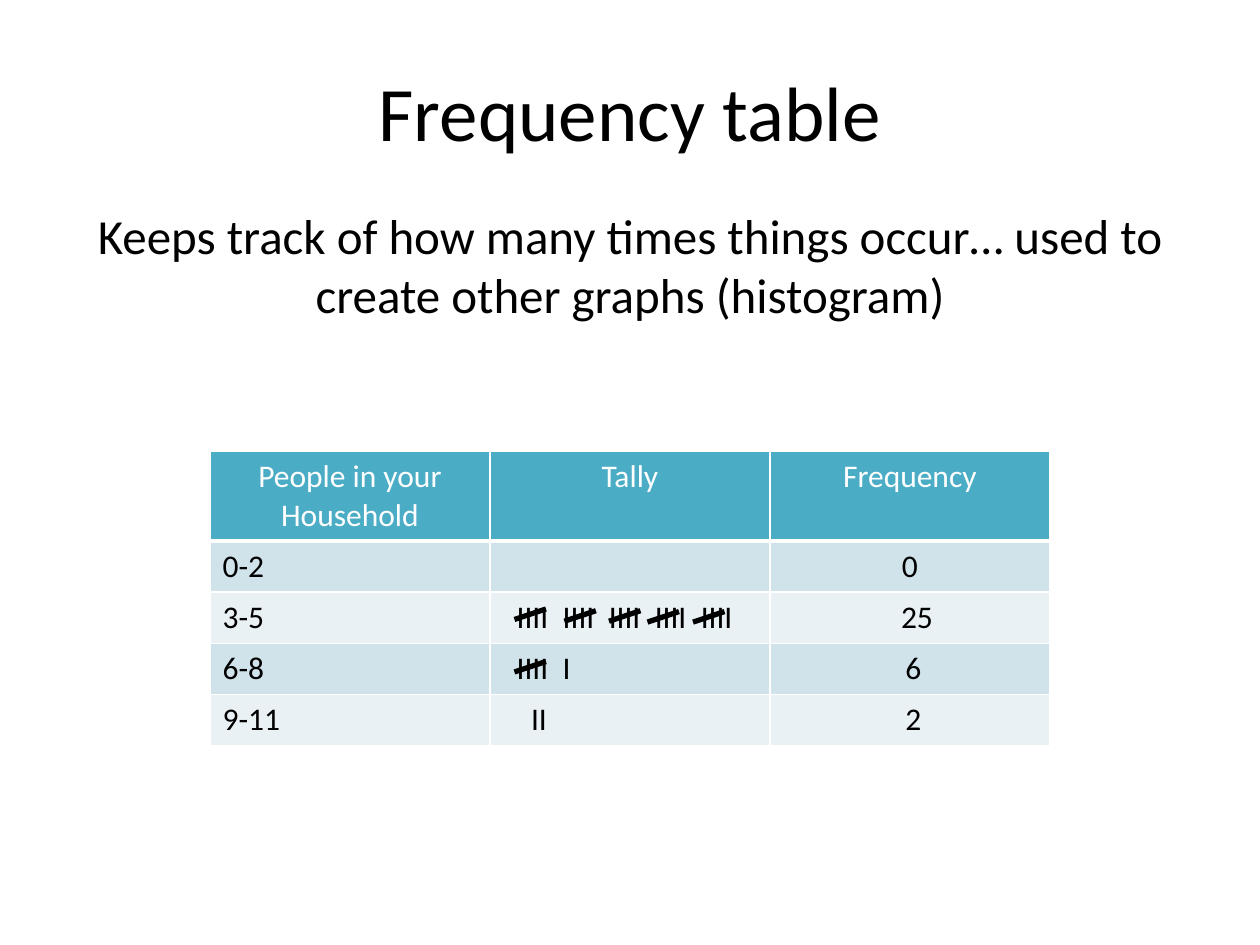
from lxml.etree import SubElement
from pptx import Presentation
from pptx.dml.color import RGBColor
from pptx.enum.shapes import MSO_CONNECTOR as Connector
from pptx.enum.text import MSO_ANCHOR as Anchor, PP_ALIGN as Align
from pptx.oxml.ns import qn
from pptx.util import Pt

FONT = "Calibri"
BLACK, WHITE, TEAL = "000000", "FFFFFF", "4BACC6"
BANDS = ("D0E3EA", "E9F1F5")
CELL_MARGIN = 7.2
TALLY_PITCH = 26.3
HEADINGS = ("People in your Household", "Tally", "Frequency")
ROWS = (
    ("0-2", "", 0, "0", 0),
    ("3-5", "IIII\tIIII\tIIII\tIIII\tIIII", 8.1, "25", 8.1),
    ("6-8", "IIII\tI", 8.1, "6", 4),
    ("9-11", "II", 16.3, "2", 4),
)
STRIKES = ((174, 126), (174, 96), (202.5, 97), (228, 97), (250, 97.5), (276, 97.5))


def color(code):
    """Turn a hex string into a colour."""
    return RGBColor.from_string(code)


def write(paragraph, words, size, code, align):
    """Add one formatted run to a paragraph."""
    paragraph.alignment = align
    run = paragraph.add_run()
    run.text = words
    run.font.name = FONT
    run.font.size = Pt(size)
    run.font.color.rgb = color(code)


def place(part, box):
    """Move a shape to a box given in points."""
    part.left, part.top, part.width, part.height = map(Pt, box)


def add_title(slide, box):
    """Fill the title placeholder."""
    title = slide.shapes.title
    place(title, box)
    title.text_frame.vertical_anchor = Anchor.MIDDLE
    write(title.text_frame.paragraphs[0], "Frequency table", 44, BLACK, Align.CENTER)


def add_description(slide, box):
    """Fill the body placeholder with an unbulleted, centred sentence."""
    body = slide.placeholders[1]
    place(body, box)
    sentence = body.text_frame.paragraphs[0]
    props = sentence._p.get_or_add_pPr()
    props.set("marL", "0")
    props.set("indent", "0")
    SubElement(props, qn("a:buNone"))
    sentence.space_before = Pt(0)
    write(
        sentence,
        "Keeps track of how many times things occur… used to create other graphs (histogram)",
        28, BLACK, Align.CENTER,
    )


def set_borders(cell, bottom):
    """Draw white lines around a cell."""
    props = cell._tc.get_or_add_tcPr()
    for index, (side, width) in enumerate((("L", 1), ("R", 1), ("T", 1), ("B", bottom))):
        line = props.makeelement(qn(f"a:ln{side}"), {"w": str(Pt(width))})
        fill = SubElement(line, qn("a:solidFill"))
        SubElement(fill, qn("a:srgbClr"), val=WHITE)
        props.insert(index, line)


def fill_cell(cell, words, fill, code=BLACK, align=Align.LEFT, inset=0, bottom=1):
    """Format one table cell and write its words."""
    cell.fill.solid()
    cell.fill.fore_color.rgb = color(fill)
    set_borders(cell, bottom)
    cell.margin_left = Pt(CELL_MARGIN + inset)
    paragraph = cell.text_frame.paragraphs[0]
    if "\t" in words:
        stops = SubElement(paragraph._p.get_or_add_pPr(), qn("a:tabLst"))
        for number in range(1, words.count("\t") + 1):
            SubElement(stops, qn("a:tab"), pos=str(Pt(number * TALLY_PITCH)), algn="l")
    paragraph.font.size = Pt(18)
    if words:
        write(paragraph, words, 18, code, align)


def add_frequency_table(slide, box):
    """Add the table and strike through its tally groups."""
    left, top, width, height = box
    frame = slide.shapes.add_table(len(ROWS) + 1, len(HEADINGS), *map(Pt, box))
    table = frame.table
    header_height = 51.2
    for column in table.columns:
        column.width = Pt(width / len(HEADINGS))
    for row in table.rows:
        row.height = Pt((height - header_height) / len(ROWS))
    table.rows[0].height = Pt(header_height)
    for index, heading in enumerate(HEADINGS):
        fill_cell(table.cell(0, index), heading, TEAL, WHITE, Align.CENTER, bottom=3)
    for index, (people, tally, tally_inset, count, count_inset) in enumerate(ROWS):
        band = BANDS[index % 2]
        fill_cell(table.cell(index + 1, 0), people, band)
        fill_cell(table.cell(index + 1, 1), tally, band, inset=tally_inset)
        fill_cell(table.cell(index + 1, 2), count, band, align=Align.CENTER, inset=count_inset)
    for x, y in STRIKES:
        add_strike(slide, (left + x, top + y - 6, 18, 6))


def add_strike(slide, box):
    """Draw a rising tally stroke across a box."""
    left, top, width, height = box
    strike = slide.shapes.add_connector(
        Connector.STRAIGHT, Pt(left), Pt(top + height), Pt(left + width), Pt(top)
    )
    strike.line.color.rgb = color(BLACK)
    strike.line.width = Pt(3)
    SubElement(strike._element.spPr, qn("a:effectLst"))


def main():
    """Build and save the slide."""
    deck = Presentation()
    deck.slide_width, deck.slide_height = Pt(720), Pt(540)
    slide = deck.slides.add_slide(deck.slide_layouts[1])
    add_title(slide, (36, 18, 648, 90))
    add_description(slide, (36, 114, 648, 356.4))
    add_frequency_table(slide, (120, 258, 480, 168))
    deck.save("out.pptx")


if __name__ == "__main__":
    main()
